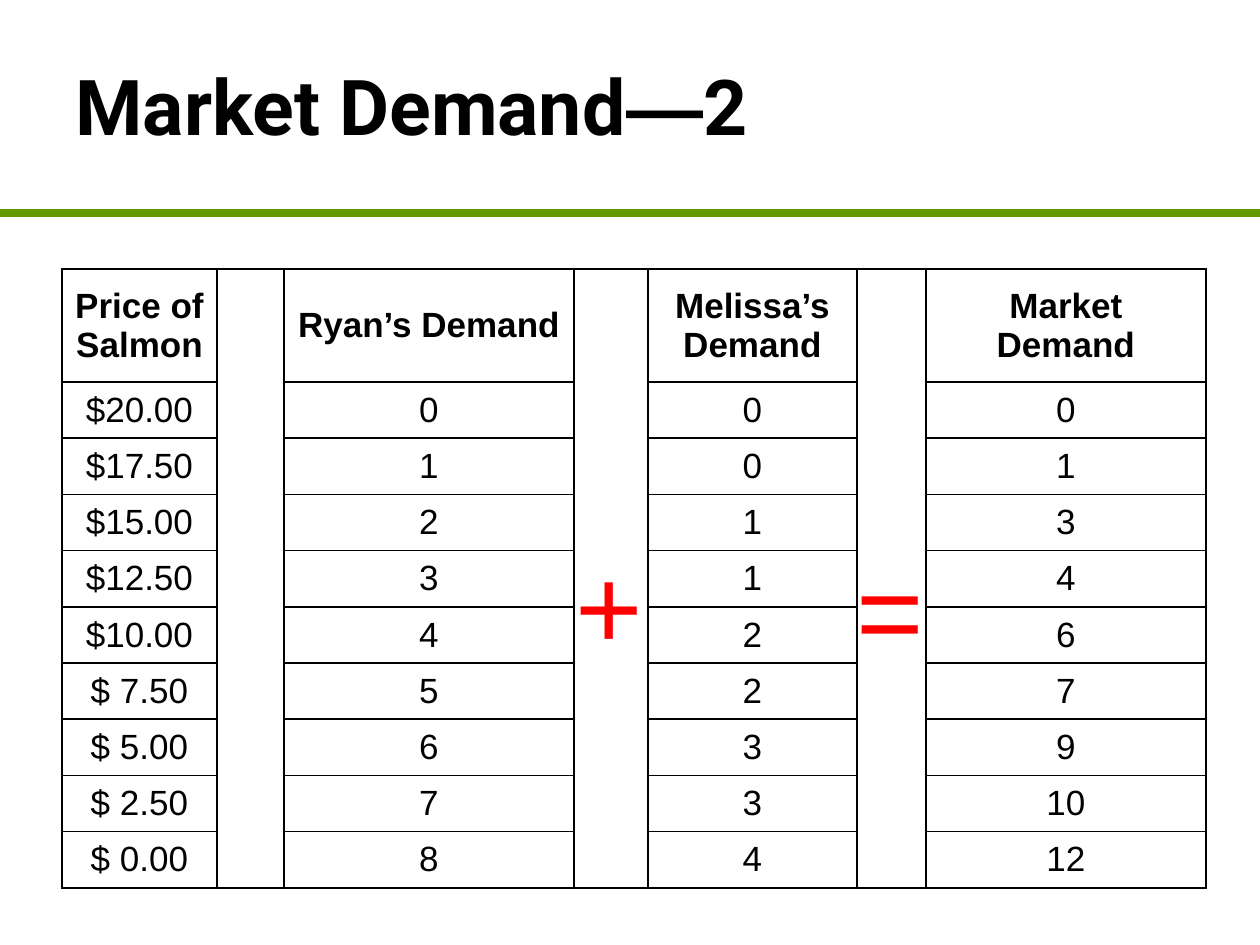
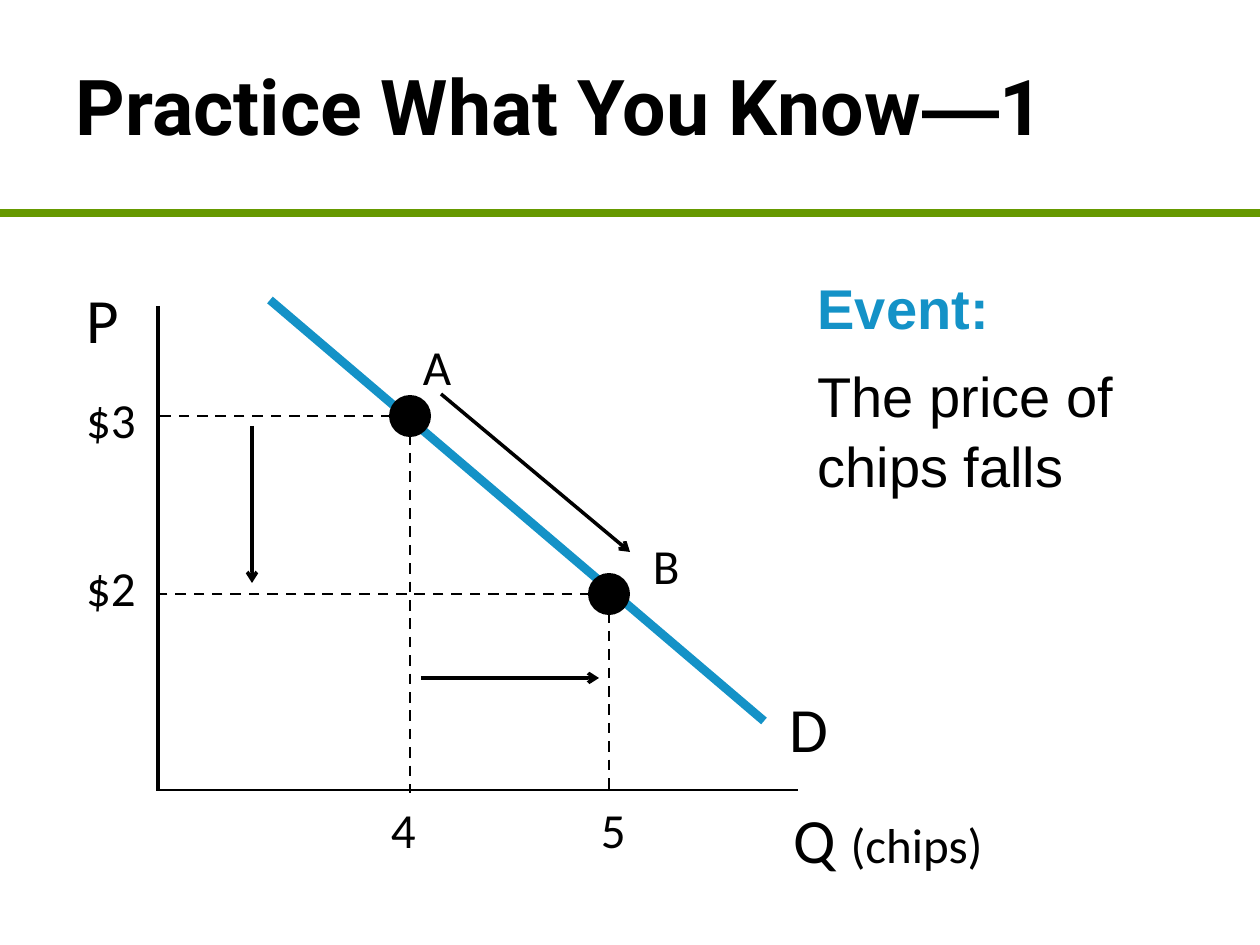
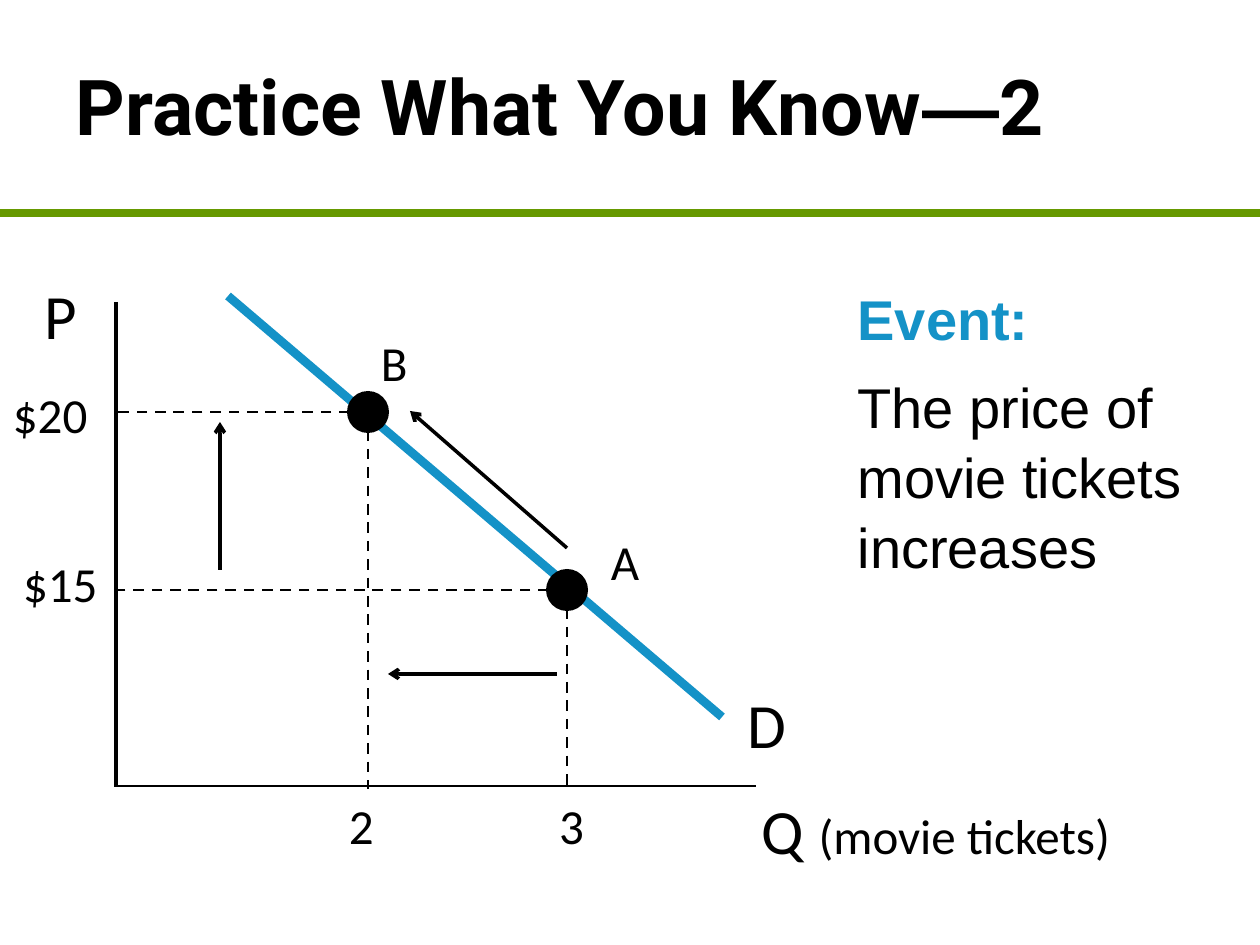
import dataclasses

import pptx
import pptx.dml.color
import pptx.enum.dml
import pptx.enum.shapes
import pptx.enum.text
import pptx.oxml
import pptx.oxml.ns
import pptx.util
from lxml import etree

PIXELS_PER_INCH = 126
ALIGN = pptx.enum.text.PP_ALIGN
ANCHOR = pptx.enum.text.MSO_ANCHOR
DASH = pptx.enum.dml.MSO_LINE.DASH


@dataclasses.dataclass(frozen=True)
class Theme:
    black: str = "000000"
    rule: str = "669900"
    accent: str = "1492C7"
    operator: str = "FF0000"
    title_font: str = "Roboto"
    text_font: str = "Arial"
    graph_font: str = "Calibri"
    title_size: int = 44
    operator_size: int = 66
    axis_size: int = 36
    event_size: int = 32
    label_size: int = 28
    table_size: int = 20


@dataclasses.dataclass(frozen=True)
class DemandGraph:
    """Points are offsets from the origin of the axes."""
    origin: tuple
    prices: tuple
    price_boxes: tuple
    quantities: tuple
    points: tuple
    product: str
    product_box: tuple
    arrows: tuple


THEME = Theme()

COLUMN_WIDTHS = (155, 67, 290, 74, 209, 69, 280)
HEADERS = ("Price of Salmon", "Ryan’s Demand", "Melissa’s Demand", "Market Demand")
DEMAND_ROWS = (
    ("$20.00", 0, 0, 0),
    ("$17.50", 1, 0, 1),
    ("$15.00", 2, 1, 3),
    ("$12.50", 3, 1, 4),
    ("$10.00", 4, 2, 6),
    ("$ 7.50", 5, 2, 7),
    ("$ 5.00", 6, 3, 9),
    ("$ 2.50", 7, 3, 10),
    ("$ 0.00", 8, 4, 12),
)

UPPER_POINT = (252, -374)
LOWER_POINT = (451, -196)

PRICE_FALL = DemandGraph(
    origin=(158, 790),
    prices=("$3", "$2"),
    price_boxes=((-85, -406, 94, 73), (-85, -238, 94, 73)),
    quantities=("4", "5"),
    points=("A", "B"),
    product="(chips)",
    product_box=(630, 8, 265, 52),
    arrows=(((283, -396), (472, -238)),
            ((94, -364), (94, -207)),
            ((263, -112), (441, -112))),
)
PRICE_RISE = DemandGraph(
    origin=(116, 786),
    prices=("$20", "$15"),
    price_boxes=((-116, -407, 105, 73), (-106, -238, 105, 73)),
    quantities=("2", "3"),
    points=("B", "A"),
    product="(movie tickets)",
    product_box=(640, 3, 476, 62),
    arrows=(((451, -238), (294, -375)),
            ((104, -216), (104, -364)),
            ((441, -112), (272, -112))),
)


def px(length):
    return pptx.util.Emu(round(length * 914400 / PIXELS_PER_INCH))


def rgb(color):
    return pptx.dml.color.RGBColor.from_string(color)


def set_font(font, name, size, color=THEME.black, bold=False):
    font.name = name
    font.size = pptx.util.Pt(size)
    font.color.rgb = rgb(color)
    font.bold = bold


def place(shape, box):
    shape.left, shape.top, shape.width, shape.height = map(px, box)


def set_insets(target, horizontal, vertical):
    target.margin_left = target.margin_right = px(horizontal)
    target.margin_top = target.margin_bottom = px(vertical)


def add_line(slide, start, end, width, color=THEME.black, dash=None, arrow=False):
    line = slide.shapes.add_connector(
        pptx.enum.shapes.MSO_CONNECTOR.STRAIGHT, *map(px, (*start, *end)))
    line.line.width = pptx.util.Pt(width)
    line.line.color.rgb = rgb(color)
    if dash is not None:
        line.line.dash_style = dash
    properties = line.element.spPr
    if arrow:
        outline = properties.find(pptx.oxml.ns.qn("a:ln"))
        etree.SubElement(outline, pptx.oxml.ns.qn("a:tailEnd"), type="arrow")
    etree.SubElement(properties, pptx.oxml.ns.qn("a:effectLst"))
    return line


def add_label(slide, box, text, size, font=THEME.graph_font, color=THEME.black,
              insets=(13, 6)):
    """Add a text box and return its paragraph."""
    shape = slide.shapes.add_textbox(*map(px, box))
    frame = shape.text_frame
    frame.word_wrap = True
    set_insets(frame, *insets)
    paragraph = frame.paragraphs[0]
    paragraph.text = text
    set_font(paragraph.font, font, size, color)
    return paragraph


def add_slide(presentation, layout_index, topic, number):
    slide = presentation.slides.add_slide(presentation.slide_layouts[layout_index])
    title = slide.shapes.title
    place(title, (63, 0, 1134, 210))
    frame = title.text_frame
    frame.auto_size = pptx.enum.text.MSO_AUTO_SIZE.NONE
    frame.vertical_anchor = ANCHOR.MIDDLE
    paragraph = frame.paragraphs[0]
    paragraph.alignment = ALIGN.LEFT
    for text, font in ((topic, THEME.title_font), ("—", THEME.text_font),
                       (number, THEME.title_font)):
        run = paragraph.add_run()
        run.text = text
        set_font(run.font, font, THEME.title_size, bold=True)
    return slide


def add_master_rule(presentation, slide):
    """Draw the green rule and move it to the master, where all slides share it."""
    rule = add_line(slide, (0, 213), (1260, 213), 4.5, THEME.rule)
    presentation.slide_master.shapes.element.append(rule.element)


def set_borders(cell, sides):
    """Draw the named sides (of L, R, T, B) and clear the others."""
    properties = cell._tc.get_or_add_tcPr()
    for position, side in enumerate("LRTB"):
        fill = (f'<a:solidFill><a:srgbClr val="{THEME.black}"/></a:solidFill>'
                if side in sides else "<a:noFill/>")
        border = pptx.oxml.parse_xml(
            f'<a:ln{side} {pptx.oxml.ns.nsdecls("a")} w="12700">{fill}</a:ln{side}>')
        properties.insert(position, border)


def add_demand_table(slide):
    rows = (HEADERS, *DEMAND_ROWS)
    frame = slide.shapes.add_table(len(rows), len(COLUMN_WIDTHS), px(62), px(269),
                                   px(sum(COLUMN_WIDTHS)), px(619))
    table = frame.table
    table.first_row = table.horz_banding = False
    for column, width in zip(table.columns, COLUMN_WIDTHS):
        column.width = px(width)
    for row_index, values in enumerate(rows):
        table.rows[row_index].height = px(506) // len(DEMAND_ROWS) if row_index else px(113)
        for column_index in range(len(COLUMN_WIDTHS)):
            cell = table.cell(row_index, column_index)
            cell.fill.background()
            cell.vertical_anchor = ANCHOR.MIDDLE
            set_insets(cell, 11, 0)
            paragraph = cell.text_frame.paragraphs[0]
            paragraph.alignment = ALIGN.CENTER
            set_font(paragraph.font, THEME.text_font, THEME.table_size, bold=row_index == 0)
            is_gap = column_index % 2 == 1
            if is_gap:
                top = "T" if row_index == 0 else ""
                bottom = "B" if row_index == len(rows) - 1 else ""
                set_borders(cell, "LR" + top + bottom)
            else:
                paragraph.text = str(values[column_index // 2])
                set_borders(cell, "LRTB")


def add_demand_graph(slide, graph):
    origin_x, origin_y = graph.origin

    def at(x, y, *size):
        return (origin_x + x, origin_y + y, *size)

    def add_graph_label(box, text, size, insets=(13, 6)):
        paragraph = add_label(slide, at(*box), text, size, insets=insets)
        paragraph.space_after = pptx.util.Pt(10)
        return paragraph

    add_line(slide, at(0, -484), at(0, 1), 2)
    add_line(slide, at(0, 0), at(640, 0), 1.5)
    add_line(slide, at(112, -490), at(606, -69), 5, THEME.accent)

    tight = (6, 3)
    add_graph_label((-77, -512, 77, 55), "P", THEME.axis_size, tight)
    add_graph_label((626, -103, 126, 87), "D", THEME.axis_size, tight)
    quantity_axis = add_graph_label(graph.product_box, "Q ", THEME.axis_size, tight)
    product = quantity_axis.add_run()
    product.text = graph.product
    product.font.size = pptx.util.Pt(THEME.label_size)

    for x, y in (UPPER_POINT, LOWER_POINT):
        add_line(slide, at(x, y), at(0, y), 1.5, dash=DASH)
        add_line(slide, at(x, y), at(x, 3), 1.5, dash=DASH)
        dot = slide.shapes.add_shape(pptx.enum.shapes.MSO_SHAPE.OVAL,
                                     *map(px, at(x - 21, y - 21, 42, 42)))
        dot.shadow.inherit = False
        dot.fill.solid()
        dot.fill.fore_color.rgb = rgb(THEME.black)
        dot.line.fill.background()

    quantity_boxes = ((220, 4, 94, 73), (430, 4, 94, 73))
    point_boxes = ((252, -459, 73, 73), (482, -260, 63, 73))
    for texts, boxes in ((graph.prices, graph.price_boxes),
                         (graph.quantities, quantity_boxes),
                         (graph.points, point_boxes)):
        for text, box in zip(texts, boxes):
            add_graph_label(box, text, THEME.label_size)

    for start, end in graph.arrows:
        add_line(slide, at(*start), at(*end), 2, arrow=True)


def fill_event(slide, box, event):
    body = slide.placeholders[1]
    place(body, box)
    frame = body.text_frame
    frame.auto_size = pptx.enum.text.MSO_AUTO_SIZE.NONE
    frame.text = "Event:\n" + event
    for paragraph, color, bold in zip(frame.paragraphs, (THEME.accent, THEME.black),
                                      (True, False)):
        paragraph.line_spacing = 1.04
        paragraph.space_before = pptx.util.Pt(0)
        paragraph.space_after = pptx.util.Pt(10)
        properties = paragraph._p.get_or_add_pPr()
        properties.set("marL", "0")
        properties.set("indent", "0")
        etree.SubElement(properties, pptx.oxml.ns.qn("a:buNone"))
        set_font(paragraph.font, THEME.text_font, THEME.event_size, color, bold)


def main():
    presentation = pptx.Presentation()
    presentation.slide_width = px(1260)
    presentation.slide_height = px(945)

    market = add_slide(presentation, 5, "Market Demand", "2")
    add_master_rule(presentation, market)
    add_demand_table(market)
    for box, sign in (((563, 528, 116, 152), "+"), ((844, 532, 116, 152), "=")):
        add_label(market, box, sign, THEME.operator_size, THEME.text_font, THEME.operator)

    fall = add_slide(presentation, 1, "Practice What You Know", "1")
    add_demand_graph(fall, PRICE_FALL)
    fill_event(fall, (805, 265, 394, 242), "The price of chips falls")

    rise = add_slide(presentation, 1, "Practice What You Know", "2")
    add_demand_graph(rise, PRICE_RISE)
    fill_event(rise, (845, 276, 364, 305), "The price of movie tickets increases")

    presentation.save("out.pptx")


if __name__ == "__main__":
    main()
